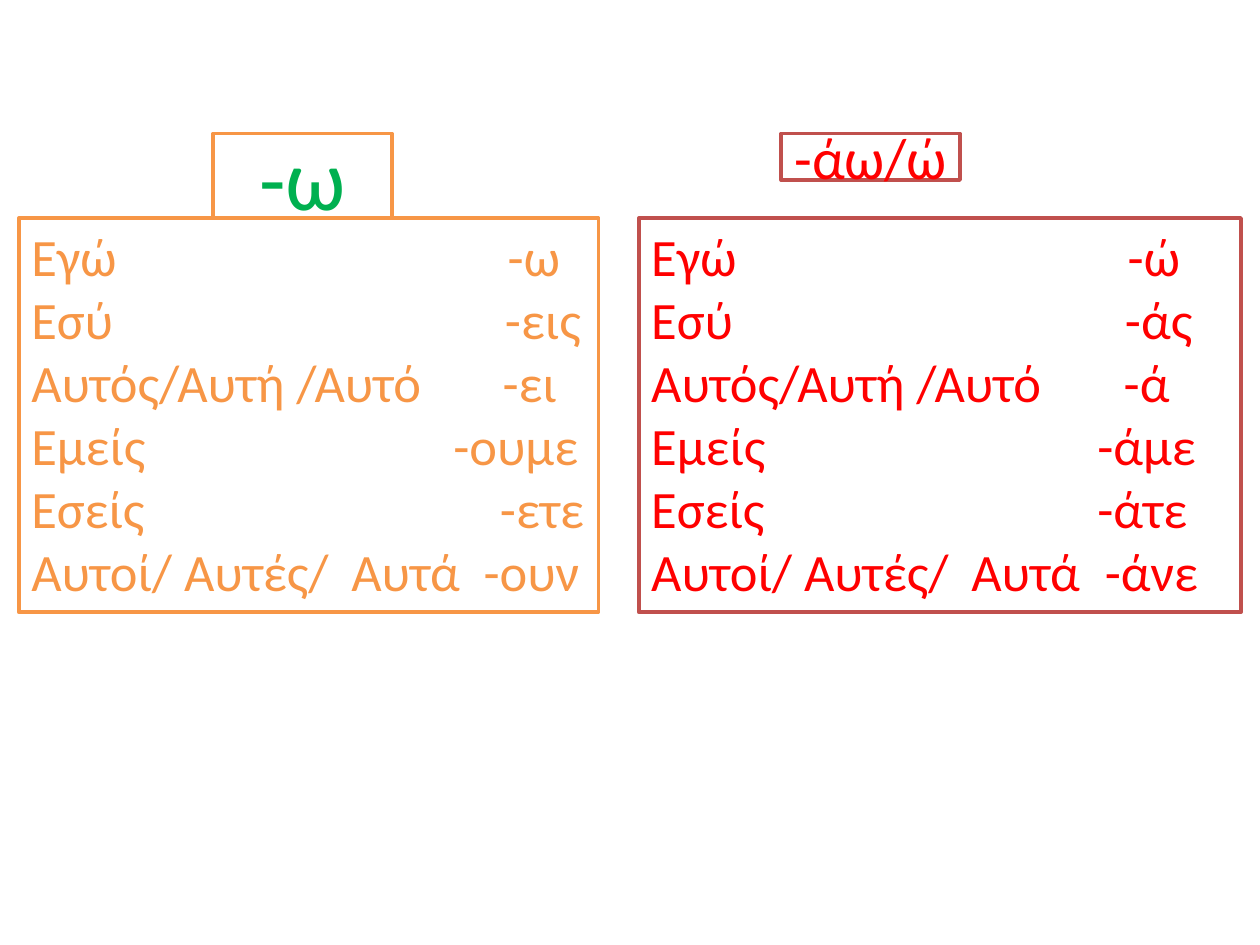
from lxml import etree
from pptx import Presentation
from pptx.dml.color import RGBColor
from pptx.enum.shapes import MSO_SHAPE
from pptx.enum.text import MSO_ANCHOR, MSO_AUTO_SIZE, PP_ALIGN
from pptx.oxml.ns import qn
from pptx.util import Inches, Pt

RECTANGLE = MSO_SHAPE.RECTANGLE
TOP, MIDDLE = MSO_ANCHOR.TOP, MSO_ANCHOR.MIDDLE
LEFT, CENTER = PP_ALIGN.LEFT, PP_ALIGN.CENTER
GROW = MSO_AUTO_SIZE.SHAPE_TO_FIT_TEXT

FONT = "Calibri"
COLORS = {
    "white": "FFFFFF",
    "orange": "F79646",
    "dark_red": "C0504D",
    "red": "FF0000",
    "green": "00B050",
}
PRONOUNS = ["Εγώ", "Εσύ", "Αυτός/Αυτή /Αυτό", "Εμείς", "Εσείς", "Αυτοί/ Αυτές/\tΑυτά"]
LAST_PRONOUN_TAB = 2.54

# Each ending comes with its tab position in inches
O_ENDINGS = [("-ω", 3.78), ("-εις", 3.76), ("-ει", 3.74),
             ("-ουμε", 3.35), ("-ετε", 3.72), ("-ουν", 3.59)]
AO_ENDINGS = [("-ώ", 3.78), ("-άς", 3.76), ("-ά", 3.75),
              ("-άμε", 3.54), ("-άτε", 3.54), ("-άνε", 3.6)]


def color(name):
    return RGBColor.from_string(COLORS[name])


def add_box(slide, box, line_color, anchor):
    shape = slide.shapes.add_shape(RECTANGLE, *(Inches(value) for value in box))
    shape.shadow.inherit = False
    shape.fill.solid()
    shape.fill.fore_color.rgb = color("white")
    shape.line.color.rgb = color(line_color)
    shape.line.width = Pt(2)
    shape.text_frame.word_wrap = True
    shape.text_frame.vertical_anchor = anchor
    return shape


def write_paragraph(paragraph, text, size, text_color, alignment):
    paragraph.text = text
    paragraph.alignment = alignment
    paragraph.font.name = FONT
    paragraph.font.size = Pt(size)
    paragraph.font.color.rgb = color(text_color)


def set_tabs(paragraph, positions):
    tab_list = etree.Element(qn("a:tabLst"))
    for position in positions:
        etree.SubElement(tab_list, qn("a:tab"), pos=str(Inches(position)), algn="l")
    paragraph._p.get_or_add_pPr().insert(0, tab_list)


def add_heading(slide, box, text, size, text_color, line_color):
    shape = add_box(slide, box, line_color, MIDDLE)
    write_paragraph(shape.text_frame.paragraphs[0], text, size, text_color, CENTER)


def add_conjugation(slide, box, endings, text_color, line_color):
    text_frame = add_box(slide, box, line_color, TOP).text_frame
    text_frame.auto_size = GROW
    for index, (pronoun, (ending, tab)) in enumerate(zip(PRONOUNS, endings)):
        paragraph = text_frame.add_paragraph() if index else text_frame.paragraphs[0]
        write_paragraph(paragraph, f"{pronoun}\t{ending}", 30, text_color, LEFT)
        set_tabs(paragraph, [LAST_PRONOUN_TAB, tab] if "\t" in pronoun else [tab])


def main():
    presentation = Presentation()
    presentation.slide_width = Inches(10)
    presentation.slide_height = Inches(7.5)
    slide = presentation.slides.add_slide(presentation.slide_layouts[6])

    # Verb endings by person
    add_conjugation(slide, (0.15, 1.73, 4.6, 3.13), O_ENDINGS, "orange", "orange")
    add_conjugation(slide, (5.07, 1.73, 4.78, 3.13), AO_ENDINGS, "red", "dark_red")

    # Verb group headings
    add_heading(slide, (1.69, 1.06, 1.42, 0.67), "-ω", 49.5, "green", "orange")
    add_heading(slide, (6.2, 1.06, 1.42, 0.37), "-άω/ώ", 33, "red", "dark_red")

    presentation.save("out.pptx")


if __name__ == "__main__":
    main()
